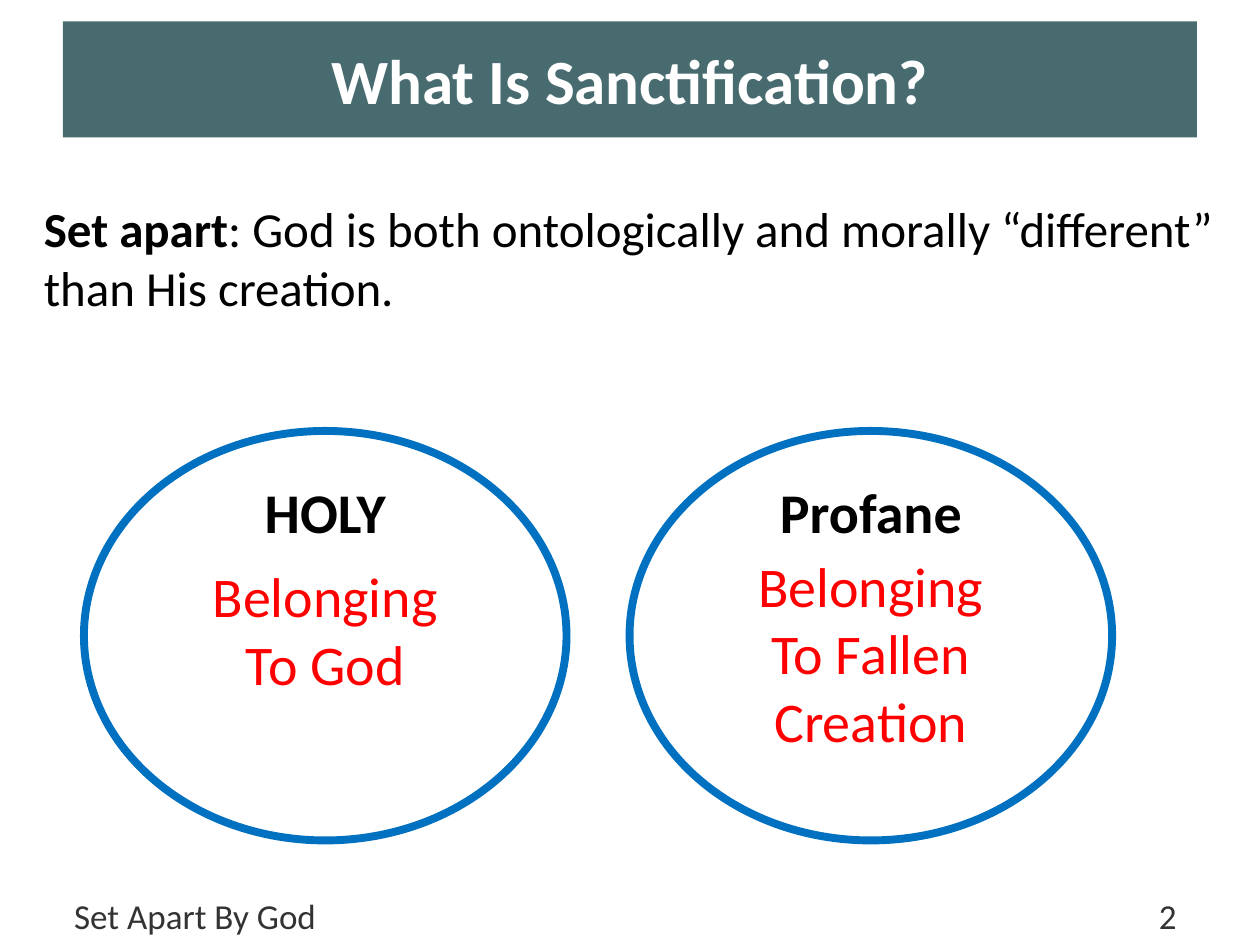
from lxml import etree
from pptx import Presentation, util as u
from pptx.dml.color import RGBColor
from pptx.enum import shapes, text
from pptx.oxml.ns import qn

# Content
TITLE = "What Is Sanctification?"
LEAD = [("Set apart", True),
        (": God is both ontologically and morally “different” than His creation.", False)]
FOOT = "Set Apart By God\t2"
# head, head width, note, note box (top, width, height)
RINGS = [("HOLY", 1.62, "Belonging To God", (4.41, 2.08, 1.18)),
         ("Profane", 1.82, "Belonging To Fallen Creation", (4.33, 2, 1.72))]

HUES = {"band": "486B70", "ring": "0070C0", "note": "FF0000",
        "ink": "000000", "pale": "FFFFFF", "foot": "333333"}
FONT = "Calibri"
WIDE, HIGH = 10, 7.5
LEFT, STEP = WIDE / 15, 4.33
RING_W, RING_H, RING_TOP = 3.83, 3.25, 3.42
MID, TOP = text.MSO_ANCHOR.MIDDLE, text.MSO_ANCHOR.TOP
CENTER, START = text.PP_ALIGN.CENTER, text.PP_ALIGN.LEFT


def hue(name):
    return RGBColor.from_string(HUES[name])


def inches(box):
    return [u.Inches(x) for x in box]


def write(shape, runs, size, color, align=START, anchor=TOP):
    frame = shape.text_frame
    frame.word_wrap = True
    frame.vertical_anchor = anchor
    para = frame.paragraphs[0]
    para.alignment = align
    for words, bold in runs:
        run = para.add_run()
        run.text = words
        font = run.font
        font.name, font.size, font.bold = FONT, u.Pt(size), bold
        font.color.rgb = hue(color)
    return para


def label(box, *args):
    return write(slide.shapes.add_textbox(*inches(box)), *args)


def draw(kind, box):
    shape = slide.shapes.add_shape(kind, *inches(box))
    shape.shadow.inherit = False
    return shape


deck = Presentation()
deck.slide_width, deck.slide_height = inches((WIDE, HIGH))
slide = deck.slides.add_slide(deck.slide_layouts[6])

# Footer with the page number on a right tab
para = label((0.49, 7.08, 9.1, 0.37), [(FOOT, False)], 20, "foot", START, MID)
tabs = etree.SubElement(para._p.get_or_add_pPr(), qn("a:tabLst"))
etree.SubElement(tabs, qn("a:tab"), pos=str(u.Inches(8.75)), algn="r")

# Title band
band = draw(shapes.MSO_SHAPE.RECTANGLE, (0.5, 0.17, 9, 0.92))
band.fill.solid()
band.fill.fore_color.rgb = hue("band")
band.line.fill.background()
write(band, [(TITLE, True)], 36, "pale", CENTER, MID)

# Definition
label((0.25, 1.53, 9.5, 1.1), LEAD, 28, "ink")

# Rings, each with a centred head and note
for i, (head, head_w, note, (top, note_w, note_h)) in enumerate(RINGS):
    left = LEFT + i * STEP
    mid = left + RING_W / 2
    ring = draw(shapes.MSO_SHAPE.OVAL, (left, RING_TOP, RING_W, RING_H))
    ring.fill.background()
    ring.line.color.rgb = hue("ring")
    ring.line.width = u.Pt(4.5)
    label((mid - note_w / 2, top, note_w, note_h), [(note, False)], 32, "note", CENTER)
    label((mid - head_w / 2, 3.74, head_w, 0.64), [(head, True)], 32, "ink", CENTER)

deck.save("out.pptx")
